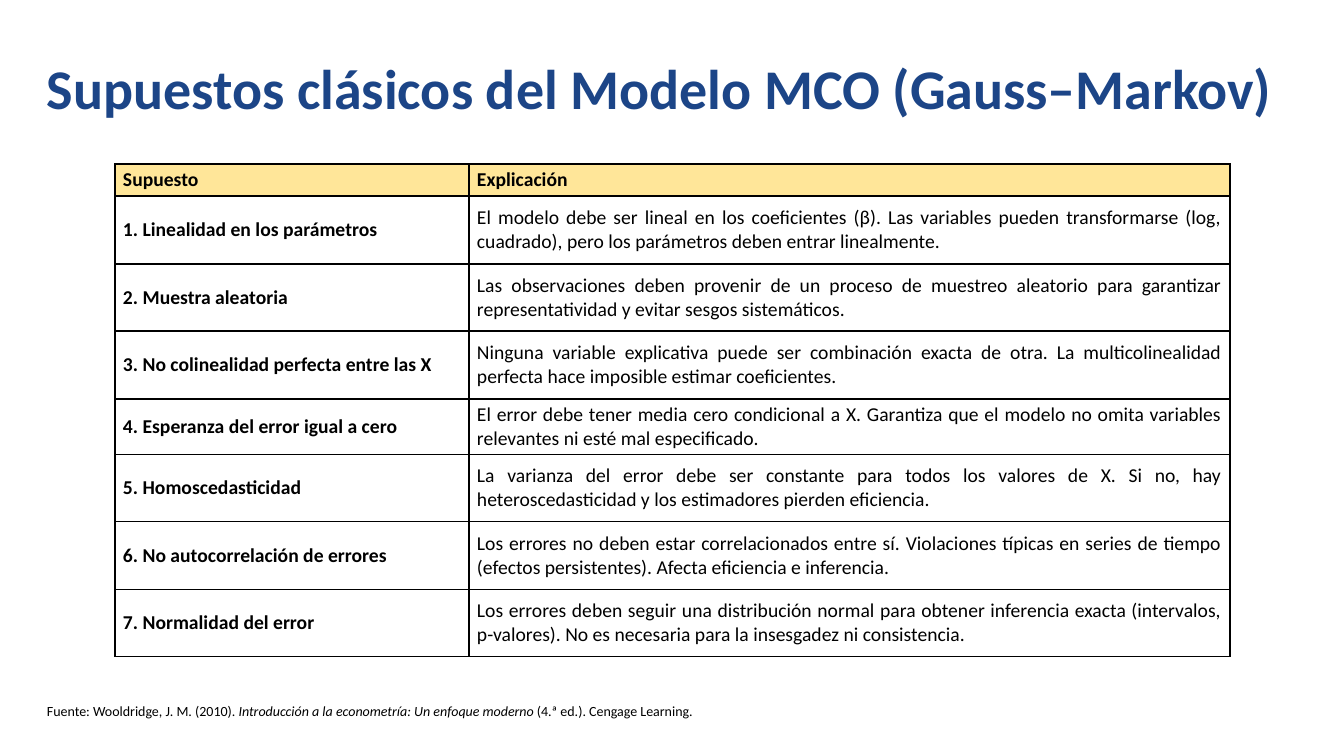
from lxml import etree
from pptx import Presentation
from pptx.dml.color import RGBColor
from pptx.enum.text import MSO_ANCHOR as Anchor, MSO_AUTO_SIZE as AutoSize, PP_ALIGN as Align
from pptx.oxml.ns import qn
from pptx.util import Emu, Pt

EMU_PER_PX = 914400 / 100.8
FONT = "Calibri"
COLORS = {"title": "1C4587", "text": "000000", "header": "FFE699", "border": "000000"}
COLUMN_WIDTHS = [354, 761]
ROW_HEIGHTS = [32, 68, 67, 68, 55, 67, 68, 67]
HEADER = ("Supuesto", "Explicación")
ASSUMPTIONS = [
    ("1. Linealidad en los parámetros",
     "El modelo debe ser lineal en los coeficientes (β). Las variables pueden transformarse (log, "
     "cuadrado), pero los parámetros deben entrar linealmente."),
    ("2. Muestra aleatoria",
     "Las observaciones deben provenir de un proceso de muestreo aleatorio para garantizar "
     "representatividad y evitar sesgos sistemáticos."),
    ("3. No colinealidad perfecta entre las X",
     "Ninguna variable explicativa puede ser combinación exacta de otra. La multicolinealidad "
     "perfecta hace imposible estimar coeficientes."),
    ("4. Esperanza del error igual a cero",
     "El error debe tener media cero condicional a X. Garantiza que el modelo no omita variables "
     "relevantes ni esté mal especificado."),
    ("5. Homoscedasticidad",
     "La varianza del error debe ser constante para todos los valores de X. Si no, hay "
     "heteroscedasticidad y los estimadores pierden eficiencia."),
    ("6. No autocorrelación de errores",
     "Los errores no deben estar correlacionados entre sí. Violaciones típicas en series de tiempo "
     "(efectos persistentes). Afecta eficiencia e inferencia."),
    ("7. Normalidad del error",
     "Los errores deben seguir una distribución normal para obtener inferencia exacta (intervalos, "
     "p-valores). No es necesaria para la insesgadez ni consistencia."),
]
SOURCE = [
    ("Fuente: Wooldridge, J. M. (2010). ", False),
    ("Introducción a la econometría: Un enfoque moderno", True),
    (" (4.ª ed.). Cengage Learning.", False),
]


def px(value):
    return Emu(round(value * EMU_PER_PX))


def format_run(run, size, color="text", bold=False, italic=False):
    font = run.font
    font.name, font.size = FONT, Pt(size)
    font.bold, font.italic = bold, italic
    font.color.rgb = RGBColor.from_string(COLORS[color])


def set_margins(target, horizontal, vertical):
    target.margin_left = target.margin_right = px(horizontal)
    target.margin_top = target.margin_bottom = px(vertical)


def add_title(slide, text):
    title = slide.shapes.title
    title.left, title.top, title.width, title.height = map(px, (37, 43, 1269, 89))
    frame = title.text_frame
    frame.text = text
    frame.auto_size = AutoSize.NONE
    frame.vertical_anchor = Anchor.TOP
    set_margins(frame, 10, 10)
    paragraph = frame.paragraphs[0]
    paragraph.alignment = Align.LEFT
    format_run(paragraph.runs[0], 40, "title", bold=True)


def add_borders(cell):
    properties = cell._tc.get_or_add_tcPr()
    for position, side in enumerate(("lnL", "lnR", "lnT", "lnB")):
        line = etree.Element(qn(f"a:{side}"), w=str(Pt(1)))
        fill = etree.SubElement(line, qn("a:solidFill"))
        etree.SubElement(fill, qn("a:srgbClr"), val=COLORS["border"])
        properties.insert(position, line)


def fill_cell(cell, text, is_header, is_explanation):
    cell.text = text
    cell.vertical_anchor = Anchor.MIDDLE
    set_margins(cell, 8, 4)
    if is_header:
        cell.fill.solid()
        cell.fill.fore_color.rgb = RGBColor.from_string(COLORS["header"])
    else:
        cell.fill.background()
    add_borders(cell)
    justified = is_explanation and not is_header
    paragraph = cell.text_frame.paragraphs[0]
    paragraph.alignment = Align.JUSTIFY if justified else Align.LEFT
    format_run(paragraph.runs[0], 14, bold=not justified)


def add_assumptions_table(slide):
    rows = [HEADER, *ASSUMPTIONS]
    table = slide.shapes.add_table(
        len(rows), len(COLUMN_WIDTHS), px(115), px(164),
        px(sum(COLUMN_WIDTHS)), px(sum(ROW_HEIGHTS))).table
    for column, width in zip(table.columns, COLUMN_WIDTHS):
        column.width = px(width)
    for row_index, (height, texts) in enumerate(zip(ROW_HEIGHTS, rows)):
        table.rows[row_index].height = px(height)
        for column_index, text in enumerate(texts):
            fill_cell(table.cell(row_index, column_index), text, row_index == 0, column_index == 1)


def add_source(slide):
    frame = slide.shapes.add_textbox(*map(px, (37, 698, 745, 27))).text_frame
    frame.word_wrap = True
    paragraph = frame.paragraphs[0]
    for text, italic in SOURCE:
        run = paragraph.add_run()
        run.text = text
        format_run(run, 10, italic=italic)


def main():
    presentation = Presentation()
    presentation.slide_width, presentation.slide_height = px(1344), px(756)
    slide = presentation.slides.add_slide(presentation.slide_layouts[5])
    add_title(slide, "Supuestos clásicos del Modelo MCO (Gauss–Markov)")
    add_assumptions_table(slide)
    add_source(slide)
    presentation.save("out.pptx")


if __name__ == "__main__":
    main()
